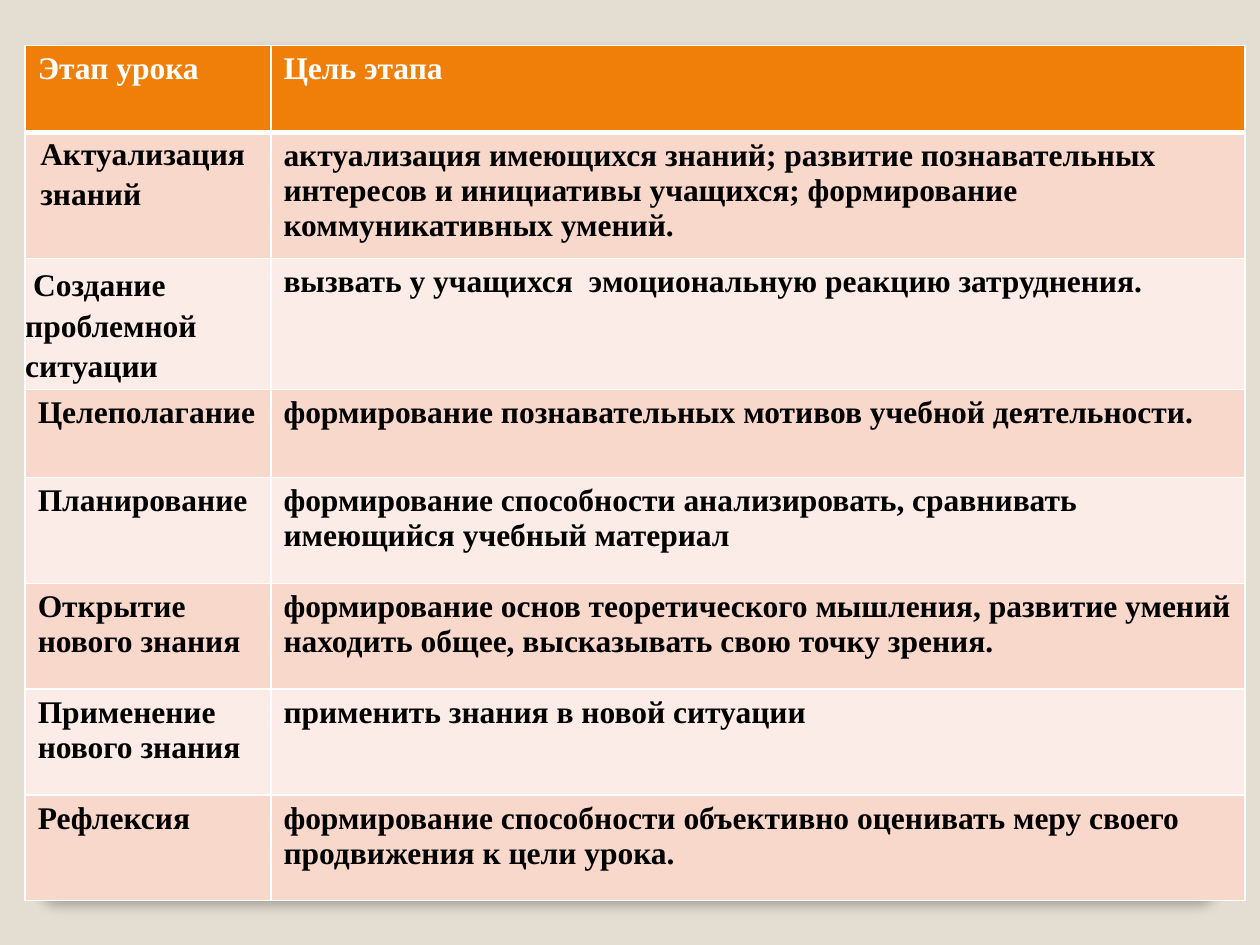
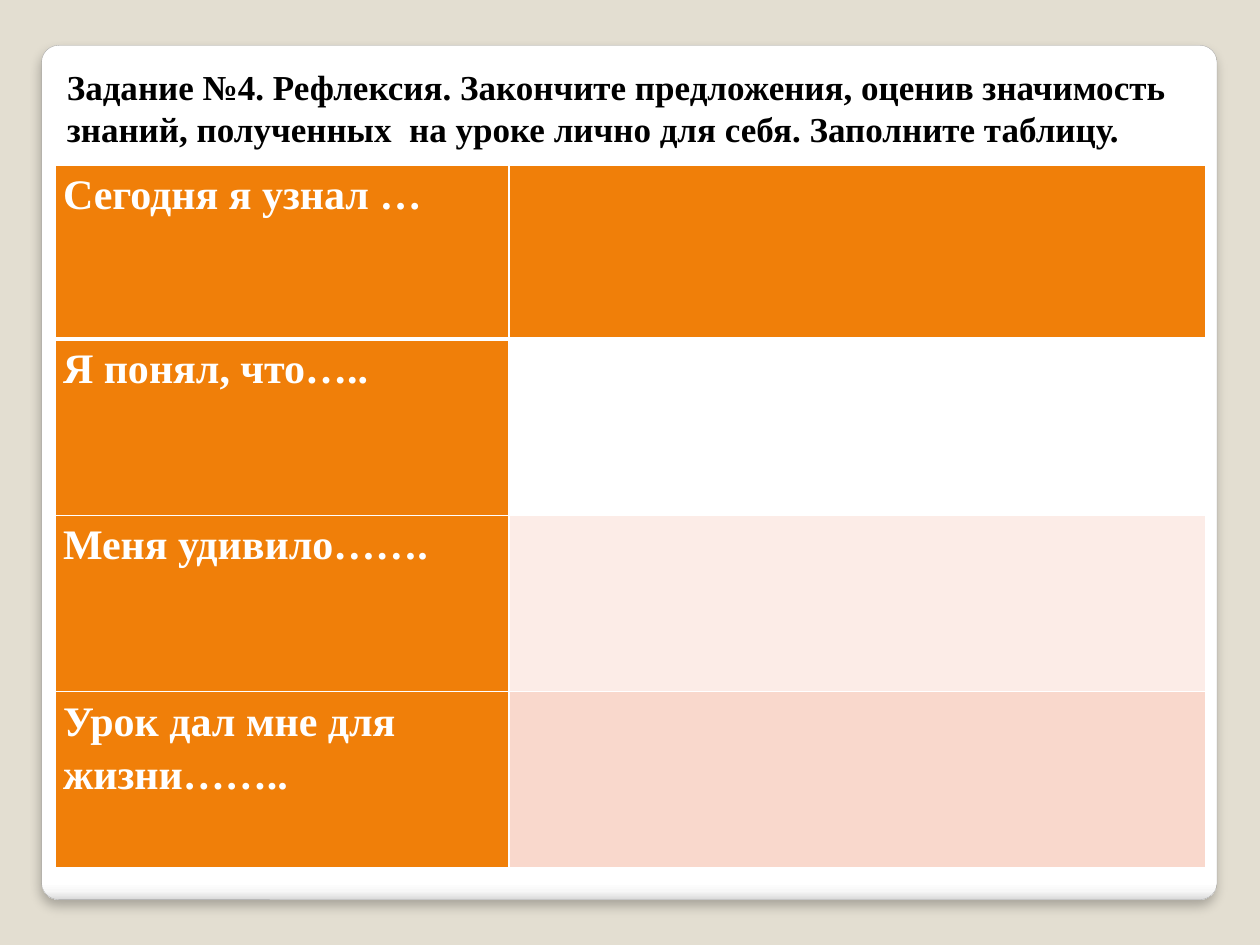
from pptx import Presentation
from pptx.dml.color import RGBColor
from pptx.enum.shapes import MSO_SHAPE
from pptx.enum.text import MSO_ANCHOR, MSO_AUTO_SIZE, PP_ALIGN
from pptx.oxml import parse_xml
from pptx.oxml.ns import nsdecls
from pptx.util import Inches, Pt

# Shared look
FONT = "Times New Roman"
BACKGROUND = "E3DED1"
ORANGE = "F07F09"
PINK = "F9D8CC"
PALE = "FCECE7"
WHITE = "FFFFFF"
BLACK = "000000"
PANEL_STOPS = [(0, WHITE), (98, WHITE), (99, "F7F7F7"), (100, "DADADA")]

STAGES = [
    ("Этап урока", "Цель этапа"),
    ("Актуализация знаний",
     "актуализация имеющихся знаний; развитие познавательных интересов и "
     "инициативы учащихся; формирование коммуникативных умений."),
    (" Создание проблемной ситуации",
     "вызвать у учащихся  эмоциональную реакцию затруднения."),
    ("Целеполагание", "формирование познавательных мотивов учебной деятельности."),
    ("Планирование",
     "формирование способности анализировать, сравнивать имеющийся учебный материал"),
    ("Открытие нового знания",
     "формирование основ теоретического мышления, развитие умений находить "
     "общее, высказывать свою точку зрения."),
    ("Применение нового знания", "применить знания в новой ситуации"),
    ("Рефлексия",
     "формирование способности объективно оценивать меру своего продвижения "
     "к цели урока."),
]
REFLECTIONS = ["Сегодня я узнал …", "Я понял, что…..", "Меня удивило…….",
               "Урок дал мне для жизни…….."]
ANSWER_FILLS = [ORANGE, None, PALE, PINK]
TASK = ["Задание №4. Рефлексия. Закончите предложения, оценив значимость",
        "знаний, полученных  на уроке лично для себя. Заполните таблицу."]


def color(hex_text):
    return RGBColor.from_string(hex_text)


def add_run(paragraph, text, size, hex_text):
    run = paragraph.add_run()
    run.text = text
    run.font.name = FONT
    run.font.size = Pt(size)
    run.font.bold = True
    run.font.color.rgb = color(hex_text)


def set_background(presentation):
    fill = presentation.slide_master.background.fill
    fill.solid()
    fill.fore_color.rgb = color(BACKGROUND)


def add_panel(slide):
    """Put the white rounded panel with its soft shadow behind everything else."""
    panel = slide.shapes.add_shape(MSO_SHAPE.ROUNDED_RECTANGLE, Inches(0.33),
                                   Inches(0.36), Inches(9.33), Inches(6.78))
    panel.adjustments[0] = 0.02
    panel.line.color.rgb = color("A4A4A4")
    panel.line.width = Pt(0.16)
    panel.shadow.inherit = False

    # Gradient fill and shadow
    stops = "".join(f'<a:gs pos="{position * 1000}"><a:srgbClr val="{tone}"/></a:gs>'
                    for position, tone in PANEL_STOPS)
    properties = panel.element.spPr
    properties.insert(2, parse_xml(
        f'<a:gradFill {nsdecls("a")}><a:gsLst>{stops}</a:gsLst>'
        '<a:lin ang="5400000" scaled="0"/></a:gradFill>'))
    properties[-1].append(parse_xml(
        f'<a:outerShdw {nsdecls("a")} blurRad="{Pt(6)}" dist="{Pt(4)}" dir="5400000" '
        f'rotWithShape="0"><a:srgbClr val="{BLACK}"><a:alpha val="25000"/>'
        '</a:srgbClr></a:outerShdw>'))
    slide.shapes.element.insert(2, panel.element)


def set_borders(cell, top=1, bottom=1):
    widths = {"lnL": 1, "lnR": 1, "lnT": top, "lnB": bottom}
    properties = cell._tc.get_or_add_tcPr()
    for index, (side, width) in enumerate(widths.items()):
        properties.insert(index, parse_xml(
            f'<a:{side} {nsdecls("a")} w="{Pt(width)}"><a:solidFill>'
            f'<a:srgbClr val="{WHITE}"/></a:solidFill></a:{side}>'))


def add_grid(slide, left, top, widths, heights):
    """Add a table with white borders and a thick line under its first row."""
    frame = slide.shapes.add_table(len(heights), len(widths), Inches(left), Inches(top),
                                   Inches(sum(widths)), Inches(sum(heights)))
    table = frame.table
    table.first_row = table.horz_banding = False
    for column, width in zip(table.columns, widths):
        column.width = Inches(width)
    for index, height in enumerate(heights):
        table.rows[index].height = Inches(height)
        for cell in table.rows[index].cells:
            set_borders(cell, top=3 if index == 1 else 1, bottom=3 if index == 0 else 1)
    return table


def fill_cell(cell, fill, text="", size=18, text_color=BLACK, side_margin=None,
              anchor=MSO_ANCHOR.TOP):
    """Fill a cell; a side margin also means no top margin and looser lines."""
    if fill:
        cell.fill.solid()
        cell.fill.fore_color.rgb = color(fill)
    else:
        cell.fill.background()
    cell.vertical_anchor = anchor
    paragraph = cell.text_frame.paragraphs[0]
    if side_margin is not None:
        cell.margin_left = cell.margin_right = Inches(side_margin)
        cell.margin_top = cell.margin_bottom = 0
        paragraph.line_spacing = 1.15
    if text:
        add_run(paragraph, text, size, text_color)


def add_title(slide, lines):
    title = slide.shapes.title
    title.left, title.top = Inches(0.43), Inches(0.45)
    title.width, title.height = Inches(9.13), Inches(0.8)
    frame = title.text_frame
    frame.word_wrap = True
    frame.auto_size = MSO_AUTO_SIZE.NONE
    frame.vertical_anchor = MSO_ANCHOR.MIDDLE
    for index, line in enumerate(lines):
        paragraph = frame.add_paragraph() if index else frame.paragraphs[0]
        paragraph.alignment = PP_ALIGN.LEFT
        add_run(paragraph, line, 20, BLACK)


def fill_stages(slide):
    table = add_grid(slide, 0.2, 0.36, [1.95, 7.73], [0.69, 1, 1.04, 0.7] + [0.84] * 4)
    special = {1: {"side_margin": 0.12},
               2: {"side_margin": 0, "anchor": MSO_ANCHOR.MIDDLE}}
    for row, (stage, goal) in enumerate(STAGES):
        fill = ORANGE if row == 0 else PINK if row % 2 else PALE
        text_color = BLACK if row else WHITE
        fill_cell(table.cell(row, 0), fill, stage, text_color=text_color,
                  **special.get(row, {}))
        fill_cell(table.cell(row, 1), fill, goal, text_color=text_color)


def fill_reflection(slide):
    add_title(slide, TASK)
    table = add_grid(slide, 0.44, 1.31, [3.6, 5.53], [1.38] + [1.4] * 3)
    for row, (opening, answer_fill) in enumerate(zip(REFLECTIONS, ANSWER_FILLS)):
        fill_cell(table.cell(row, 0), ORANGE, opening, 24, WHITE, side_margin=0.06)
        fill_cell(table.cell(row, 1), answer_fill)


def main():
    presentation = Presentation()
    presentation.slide_width, presentation.slide_height = Inches(10), Inches(7.5)
    set_background(presentation)
    title_only, blank = presentation.slide_layouts[5], presentation.slide_layouts[6]

    # Lesson stages with their goals, then the reflection task
    for layout, fill_slide in ((blank, fill_stages), (title_only, fill_reflection)):
        slide = presentation.slides.add_slide(layout)
        add_panel(slide)
        fill_slide(slide)

    presentation.save("out.pptx")


if __name__ == "__main__":
    main()
